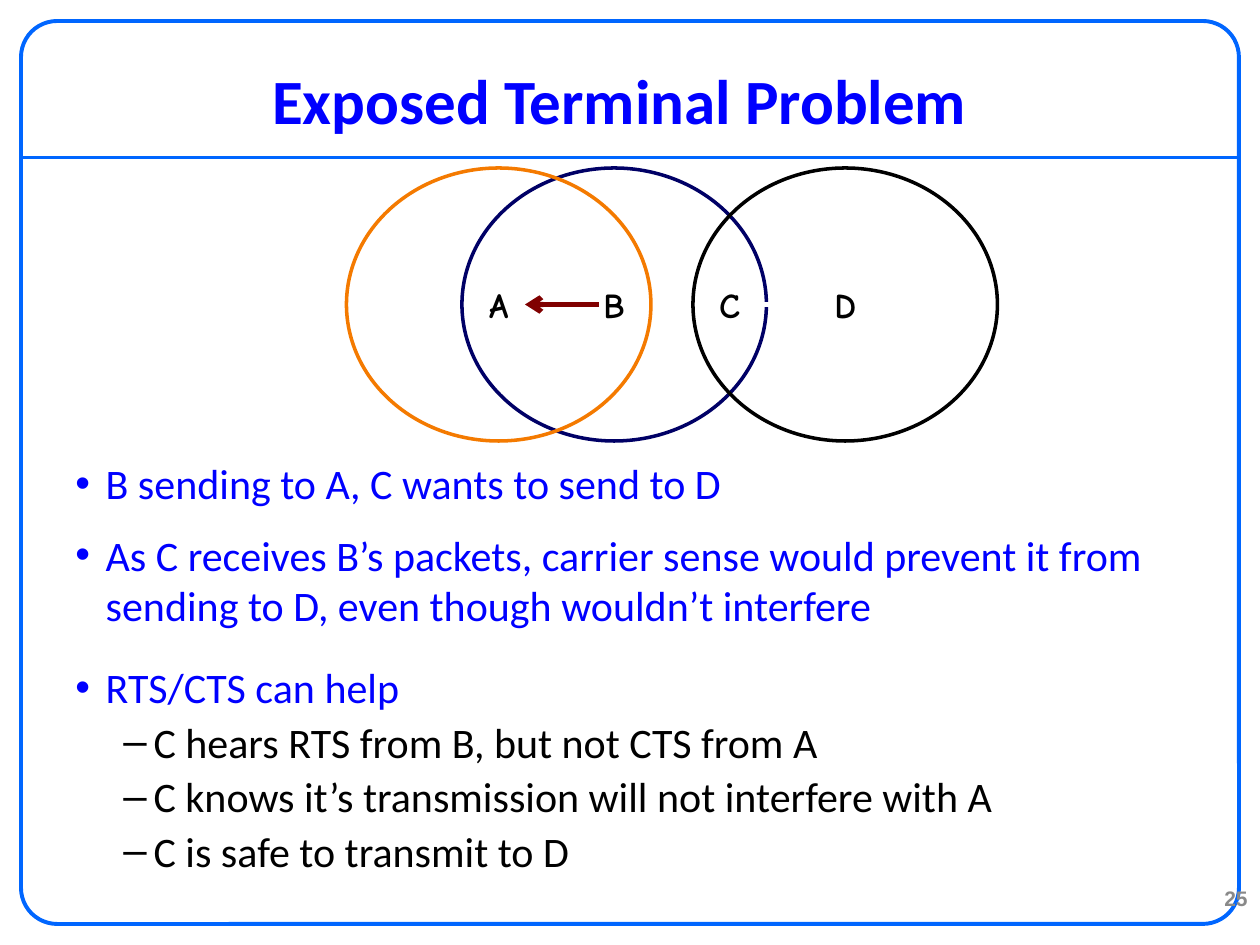
from lxml import etree
from pptx import Presentation
from pptx.dml.color import RGBColor
from pptx.enum import shapes, text
from pptx.oxml import ns
from pptx.util import Pt

FRAME_BLUE = RGBColor(0x00, 0x66, 0xFF)
TEXT_BLUE = RGBColor(0x00, 0x00, 0xFF)
NAVY = RGBColor(0x00, 0x00, 0x66)
ORANGE = RGBColor(0xF4, 0x7A, 0x00)
MAROON = RGBColor(0x80, 0x00, 0x00)
GREY = RGBColor(0x89, 0x89, 0x89)
BLACK = RGBColor(0x00, 0x00, 0x00)
WHITE = RGBColor(0xFF, 0xFF, 0xFF)

# Terminals from left to right, with the colour of their radio range
TERMINALS = {"A": ORANGE, "B": NAVY, "C": None, "D": BLACK}
DRAW_ORDER = "CBAD"
RANGE_LEFT, RANGE_TOP, RANGE_STEP = 198, 96, 66
RANGE_WIDTH, RANGE_HEIGHT = 174, 156

# Level, wording, space before, space after
POINTS = [
    (0, "B sending to A, C wants to send to D", 0, 0),
    (0, "As C receives B’s packets, carrier sense would prevent it from "
        "sending to D, even though wouldn’t interfere", 12, 6),
    (0, "RTS/CTS can help", 12, 0),
    (1, "C hears RTS from B, but not CTS from A", 2.4, 0),
    (1, "C knows it’s transmission will not interfere with A", 2.4, 0),
    (1, "C is safe to transmit to D", 2.4, 0),
]
# Bullet, left margin and colour of each level
LEVELS = [("•", 17.28, TEXT_BLUE), ("–", 44.64, BLACK)]
HANGING = 17.28


def box(left, top, width, height):
    return Pt(left), Pt(top), Pt(width), Pt(height)


def style(paragraph, font_name, size, color, bold=False):
    for run in paragraph.runs:
        run.font.name = font_name
        run.font.size = Pt(size)
        run.font.bold = bold
        run.font.color.rgb = color


def add_outline(slide, preset, area, color, width):
    outline = slide.shapes.add_shape(preset, *box(*area))
    outline.shadow.inherit = False
    outline.fill.background()
    if color is None:
        outline.line.fill.background()
    else:
        outline.line.color.rgb = color
        outline.line.width = Pt(width)
    return outline


def add_line(slide, start, end, color, width, arrow=False):
    line = slide.shapes.add_connector(
        shapes.MSO_CONNECTOR.STRAIGHT, *(Pt(v) for v in start + end))
    line.line.color.rgb = color
    line.line.width = Pt(width)
    if arrow:
        etree.SubElement(line.line._get_or_add_ln(), ns.qn("a:tailEnd"), type="arrow")
    etree.SubElement(line._element.spPr, ns.qn("a:effectLst"))


def add_frame(slide):
    add_line(slide, (12, 90), (708, 90), FRAME_BLUE, 2.25)
    border = add_outline(slide, shapes.MSO_SHAPE.ROUNDED_RECTANGLE,
                         (12, 12, 696, 516), FRAME_BLUE, 2.25)
    border.adjustments[0] = 0.04


def set_title(slide, wording):
    title = slide.shapes.title
    title.left, title.top, title.width, title.height = box(24, 30, 660, 54)
    title.text_frame.text = wording
    title.text_frame.vertical_anchor = text.MSO_ANCHOR.MIDDLE
    heading = title.text_frame.paragraphs[0]
    heading.alignment = text.PP_ALIGN.CENTER
    style(heading, "Calibri", 36, TEXT_BLUE, bold=True)


def add_terminal(slide, name):
    left = RANGE_LEFT + list(TERMINALS).index(name) * RANGE_STEP
    terminal = add_outline(slide, shapes.MSO_SHAPE.OVAL,
                           (left, RANGE_TOP, RANGE_WIDTH, RANGE_HEIGHT),
                           TERMINALS[name], 2)
    terminal.text_frame.text = name
    terminal.text_frame.vertical_anchor = text.MSO_ANCHOR.MIDDLE
    label = terminal.text_frame.paragraphs[0]
    label.alignment = text.PP_ALIGN.CENTER
    style(label, "Comic Neue", 20, BLACK, bold=True)


def add_points(slide):
    frame = slide.shapes.add_textbox(*box(36, 258, 666, 276)).text_frame
    frame.word_wrap = True
    frame.text = "\n".join(wording for _, wording, _, _ in POINTS)
    for point, (level, _, before, after) in zip(frame.paragraphs, POINTS):
        bullet, margin, color = LEVELS[level]
        point.level = level
        point.space_before, point.space_after = Pt(before), Pt(after)
        style(point, "Calibri", 24, color)
        properties = point._p.get_or_add_pPr()
        properties.set("marL", str(Pt(margin)))
        properties.set("indent", str(-Pt(HANGING)))
        etree.SubElement(properties, ns.qn("a:buFont"), typeface="Arial")
        etree.SubElement(properties, ns.qn("a:buChar"), char=bullet)


def add_slide_number(slide, number):
    frame = slide.shapes.add_textbox(*box(552, 502.5, 168, 29)).text_frame
    frame.word_wrap = True
    frame.text = number
    frame.paragraphs[0].alignment = text.PP_ALIGN.RIGHT
    style(frame.paragraphs[0], "Arial", 12, GREY, bold=True)


def main():
    deck = Presentation()
    deck.slide_width, deck.slide_height = Pt(720), Pt(540)
    slide = deck.slides.add_slide(deck.slide_layouts[5])

    # Frame and text
    add_frame(slide)
    set_title(slide, "Exposed Terminal Problem")
    add_points(slide)
    add_slide_number(slide, "25")

    # Radio ranges and transmissions
    for name in DRAW_ORDER:
        add_terminal(slide, name)
    middle = RANGE_TOP + RANGE_HEIGHT / 2
    add_line(slide, (342, middle), (300, middle), MAROON, 3, arrow=True)
    add_line(slide, (426, middle), (468, middle), WHITE, 3, arrow=True)

    deck.save("out.pptx")


main()
